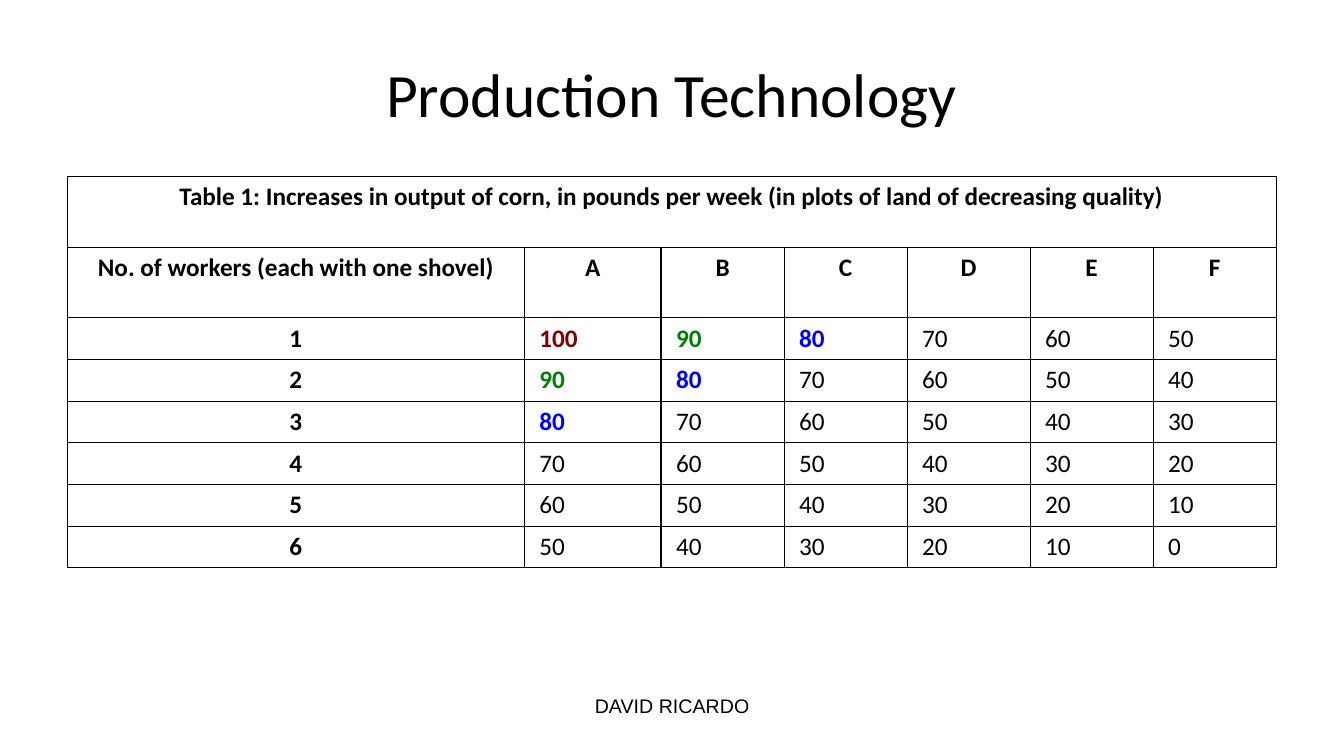
from dataclasses import dataclass

from lxml.etree import SubElement
from pptx import Presentation
from pptx.dml.color import RGBColor
from pptx.enum.text import MSO_ANCHOR, PP_ALIGN
from pptx.oxml.ns import qn
from pptx.slide import Slide
from pptx.table import Table, _Cell
from pptx.util import Cm, Pt

BLACK = RGBColor(0x00, 0x00, 0x00)
MAROON = RGBColor(0x80, 0x00, 0x00)
GREEN = RGBColor(0x00, 0x80, 0x00)
BLUE = RGBColor(0x00, 0x00, 0xFF)

PLOTS = "ABCDEF"
WORKERS = range(1, 7)
FIRST_OUTPUT = 100
OUTPUT_STEP = 10
# The three highest output levels are highlighted
OUTPUT_COLORS = {100: MAROON, 90: GREEN, 80: BLUE}

COLUMN_WIDTHS = [11.51, 3.45] + [3.1] * 5
ROW_HEIGHTS = [1.78] * 2 + [1.05] * len(WORKERS)
HANGING_INDENT = Cm(0.97)


@dataclass
class Caption:
    text: str
    left: float
    top: float
    width: float
    height: float
    font: str
    size: int
    anchor: MSO_ANCHOR


@dataclass
class Entry:
    row: int
    column: int
    text: str
    color: RGBColor = BLACK
    bold: bool = True
    align: PP_ALIGN = PP_ALIGN.CENTER


CAPTIONS = [
    Caption("Production Technology", 1.69, 0.76, 30.48, 3.18,
            "Calibri", 44, MSO_ANCHOR.MIDDLE),
    Caption("DAVID RICARDO", 11.58, 17.35, 10.72, 1.32,
            "Arial", 14, MSO_ANCHOR.TOP),
]


def add_caption(slide: Slide, caption: Caption) -> None:
    box = slide.shapes.add_textbox(Cm(caption.left), Cm(caption.top),
                                   Cm(caption.width), Cm(caption.height))
    frame = box.text_frame
    frame.word_wrap = True
    frame.vertical_anchor = caption.anchor
    paragraph = frame.paragraphs[0]
    paragraph.text = caption.text
    paragraph.alignment = PP_ALIGN.CENTER
    paragraph.font.name = caption.font
    paragraph.font.size = Pt(caption.size)
    paragraph.font.color.rgb = BLACK


def add_borders(cell: _Cell) -> None:
    properties = cell._tc.get_or_add_tcPr()
    for side in ("a:lnL", "a:lnR", "a:lnT", "a:lnB"):
        line = SubElement(properties, qn(side), w=str(Pt(1)))
        fill = SubElement(line, qn("a:solidFill"))
        SubElement(fill, qn("a:srgbClr"), val=str(BLACK))


def fill_entry(table: Table, entry: Entry) -> None:
    cell = table.cell(entry.row, entry.column)
    paragraph = cell.text_frame.paragraphs[0]
    paragraph.text = entry.text
    paragraph.alignment = entry.align
    paragraph.font.name = "Calibri"
    paragraph.font.size = Pt(18)
    paragraph.font.bold = entry.bold
    paragraph.font.color.rgb = entry.color
    indents = paragraph._p.get_or_add_pPr()
    indents.set("marL", str(HANGING_INDENT))
    indents.set("indent", str(-HANGING_INDENT))


def output_entries() -> list[Entry]:
    entries = [
        Entry(0, 0, "Table 1: Increases in output of corn, in pounds per week "
                    "(in plots of land of decreasing quality)"),
        Entry(1, 0, "No. of workers (each with one shovel)"),
    ]
    entries += [Entry(1, column, plot) for column, plot in enumerate(PLOTS, 1)]
    for row, worker in enumerate(WORKERS, 2):
        entries.append(Entry(row, 0, str(worker)))
        for rank in range(len(PLOTS)):
            # Each further worker or poorer plot lowers the output by one step
            output = FIRST_OUTPUT - OUTPUT_STEP * (worker - 1 + rank)
            entries.append(Entry(row, rank + 1, str(output),
                                 OUTPUT_COLORS.get(output, BLACK),
                                 output in OUTPUT_COLORS, PP_ALIGN.LEFT))
    return entries


def add_output_table(slide: Slide) -> None:
    table = slide.shapes.add_table(
        len(ROW_HEIGHTS), len(COLUMN_WIDTHS), Cm(1.7), Cm(4.45),
        Cm(sum(COLUMN_WIDTHS)), Cm(sum(ROW_HEIGHTS))).table
    table.first_row = False
    table.horz_banding = False
    for column, width in zip(table.columns, COLUMN_WIDTHS):
        column.width = Cm(width)
    for row, height in zip(table.rows, ROW_HEIGHTS):
        row.height = Cm(height)
    for cell in table.iter_cells():
        cell.margin_left = cell.margin_right = Cm(0.38)
        cell.margin_top = cell.margin_bottom = Cm(0.13)
        add_borders(cell)
        cell.fill.background()
    table.cell(0, 0).merge(table.cell(0, len(PLOTS)))
    for entry in output_entries():
        fill_entry(table, entry)


def main() -> None:
    presentation = Presentation()
    presentation.slide_width = Cm(33.87)
    presentation.slide_height = Cm(19.05)
    slide = presentation.slides.add_slide(presentation.slide_layouts[6])

    # Title and footer
    for caption in CAPTIONS:
        add_caption(slide, caption)

    # Output by workers and plots
    add_output_table(slide)

    presentation.save("out.pptx")


if __name__ == "__main__":
    main()
